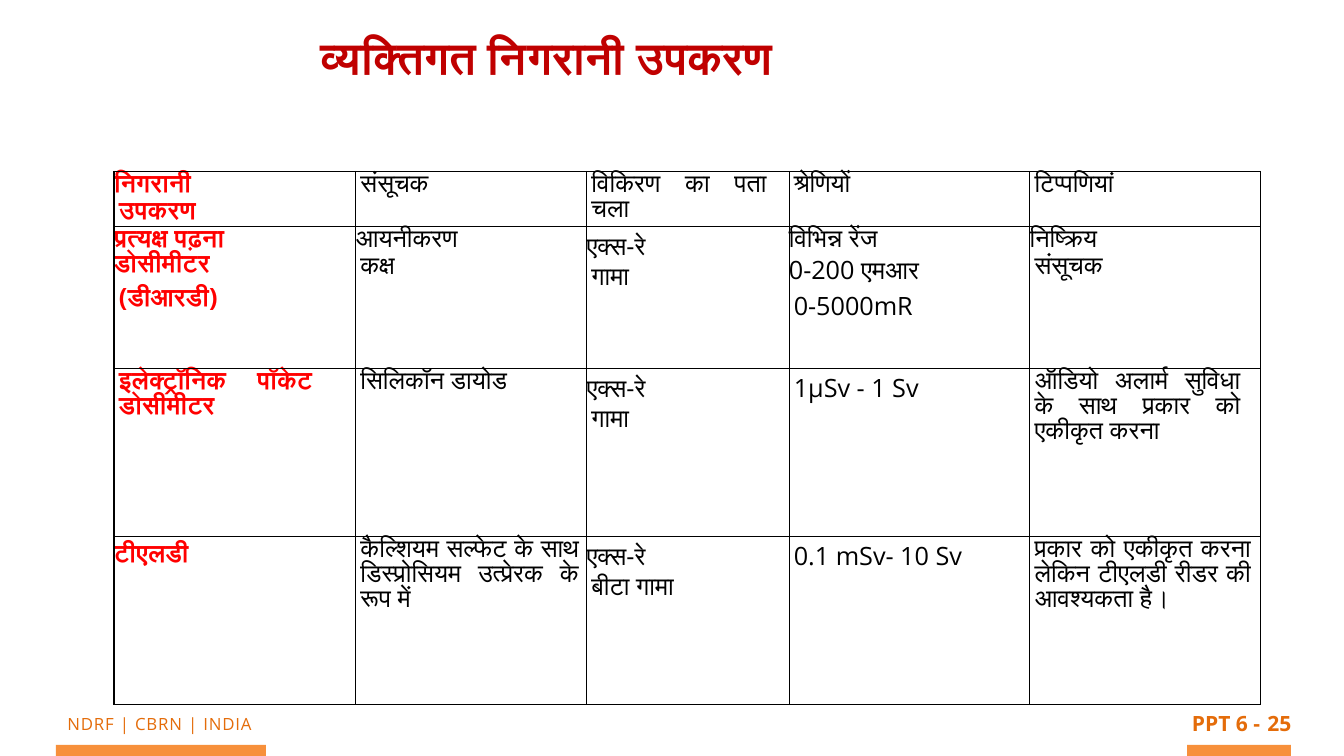
from dataclasses import dataclass

from lxml import etree
from pptx import Presentation
from pptx.dml.color import RGBColor
from pptx.enum import shapes, text
from pptx.oxml.ns import qn
from pptx.util import Emu, Pt

PX = 12700  # EMU per px on a 1920 x 1080 slide


@dataclass(frozen=True)
class Theme:
    font: str = "Open Sans"
    title: str = "C00000"
    label: str = "FF0000"
    body: str = "000000"
    footer: str = "E46C0A"
    bar: str = "F7903B"
    title_size: int = 64
    table_size: int = 36
    page_size: int = 30
    footer_size: int = 24
    compact_line: int = 36  # Devanagari only
    mixed_line: int = 46    # Latin signs below a compact line
    loose_line: int = 44
    outer_line: float = 2.25
    inner_line: float = 1


THEME = Theme()
INDENT = 7

COLUMN_WIDTHS = [345, 330, 289, 344, 330]
ROW_HEIGHTS = [78, 203, 240, 240]
# Each cell lists its paragraphs
ROWS = [
    [["निगरानी", "उपकरण"], ["संसूचक"], ["विकिरण का पता चला"], ["श्रेणियों"], ["टिप्पणियां"]],
    [["प्रत्यक्ष पढ़ना", "डोसीमीटर", "(डीआरडी)"], ["आयनीकरण", "कक्ष"], ["एक्स-रे", "गामा"],
     ["विभिन्न रेंज", "0-200 एमआर", "0-5000mR"], ["निष्क्रिय", "संसूचक"]],
    [["इलेक्ट्रॉनिक पॉकेट डोसीमीटर"], ["सिलिकॉन डायोड"], ["एक्स-रे", "गामा"],
     ["1μSv - 1 Sv"], ["ऑडियो अलार्म सुविधा के साथ प्रकार को एकीकृत करना"]],
    [["टीएलडी"], ["कैल्शियम सल्फेट के साथ डिस्प्रोसियम उत्प्रेरक के रूप में"],
     ["एक्स-रे", "बीटा गामा"], ["0.1 mSv- 10 Sv"],
     ["प्रकार को एकीकृत करना लेकिन टीएलडी रीडर की आवश्यकता है।"]],
]
# Right indents of the wrapped cells, by (row, column)
RIGHT_INDENTS = {(0, 2): 32, (2, 0): 62, (2, 4): 29, (3, 1): 11, (3, 4): 14}


def px(value):
    return Emu(value * PX)


def add_run(paragraph, words, size, color, bold=False, spacing=0):
    run = paragraph.add_run()
    run.text = words
    font = run.font
    font.size, font.bold, font.name = Pt(size), bold, THEME.font
    font.color.rgb = RGBColor.from_string(color)
    properties = run._r.get_or_add_rPr()
    etree.SubElement(properties, qn("a:cs"), typeface=THEME.font)
    if spacing:
        properties.set("spc", str(spacing))


def add_text(slide, box, words, size, color, bold=False, spacing=0, inset=(6, 6),
             align=text.PP_ALIGN.CENTER, wrap=True):
    frame = slide.shapes.add_textbox(*map(px, box)).text_frame
    frame.word_wrap = wrap
    frame.margin_left = frame.margin_right = px(inset[0])
    frame.margin_top = frame.margin_bottom = px(inset[1])
    paragraph = frame.paragraphs[0]
    paragraph.alignment = align
    add_run(paragraph, words, size, color, bold, spacing)


def add_bar(slide, box):
    shape = slide.shapes.add_shape(shapes.MSO_SHAPE.RECTANGLE, *map(px, box))
    shape.shadow.inherit = False
    shape.fill.solid()
    shape.fill.fore_color.rgb = RGBColor.from_string(THEME.bar)
    shape.line.fill.background()


def add_footer(slide, left, top):
    # Organisation on the left
    add_text(slide, (left, top + 5, 366, 42), "NDRF | CBRN | INDIA",
             THEME.footer_size, THEME.footer, spacing=120)
    add_bar(slide, (left + 35, top + 55, 300, 16))
    # Page number on the right
    page = left + 1651
    add_text(slide, (page, top, 111, 49), "PPT 6 -", THEME.page_size,
             THEME.footer, bold=True, wrap=False)
    add_text(slide, (page + 96, top, 71, 40), "25", THEME.page_size,
             THEME.footer, bold=True)
    add_bar(slide, (page, top + 55, 148, 16))


def add_title(slide, box):
    add_text(slide, box, "व्यक्तिगत निगरानी उपकरण", THEME.title_size, THEME.title,
             bold=True, inset=(7, 3), align=text.PP_ALIGN.LEFT)


def set_borders(cell, outer_sides):
    properties = cell._tc.get_or_add_tcPr()
    for index, side in enumerate("LRTB"):
        width = THEME.outer_line if side in outer_sides else THEME.inner_line
        line = etree.Element(qn(f"a:ln{side}"), w=str(Pt(width)))
        fill = etree.SubElement(line, qn("a:solidFill"))
        etree.SubElement(fill, qn("a:srgbClr"), val=THEME.body)
        properties.insert(index, line)


def has_latin(words):
    return any(sign in "-()" or sign.isascii() and sign.isalnum() for sign in words)


def fill_cell(cell, paragraphs, is_label, right_indent, loose):
    cell.margin_left = cell.margin_right = cell.margin_bottom = 0
    cell.margin_top = px(3 if loose or has_latin(paragraphs[0]) else 4)
    cell.fill.background()
    frame = cell.text_frame
    for index, words in enumerate(paragraphs):
        paragraph = frame.add_paragraph() if index else frame.paragraphs[0]
        paragraph.alignment = text.PP_ALIGN.JUSTIFY
        after_latin = index > 0 and has_latin(paragraphs[index - 1])
        # Line height follows the script of the paragraph
        if loose:
            paragraph.line_spacing = Pt(THEME.loose_line)
        elif not has_latin(words):
            paragraph.line_spacing = Pt(THEME.compact_line)
        elif index and not after_latin:
            paragraph.line_spacing = Pt(THEME.mixed_line)
        # Only the closing paragraph of a cell is indented
        if not loose and index == len(paragraphs) - 1:
            properties = paragraph._p.get_or_add_pPr()
            properties.set("marL", str(px(INDENT)))
            properties.set("marR", str(px(right_indent)))
            properties.set("indent", "0")
            if index:
                compact_after_latin = after_latin and not has_latin(words)
                paragraph.space_before = Pt(6 if compact_after_latin else 2.8)
        add_run(paragraph, words, THEME.table_size,
                THEME.label if is_label else THEME.body, bold=is_label)


def add_monitor_table(slide, left, top):
    box = (left, top, sum(COLUMN_WIDTHS), sum(ROW_HEIGHTS))
    table = slide.shapes.add_table(len(ROWS), len(COLUMN_WIDTHS), *map(px, box)).table
    table.first_row = table.horz_banding = False
    for column, width in zip(table.columns, COLUMN_WIDTHS):
        column.width = px(width)
    last_row, last_column = len(ROWS) - 1, len(COLUMN_WIDTHS) - 1
    for r, row in enumerate(ROWS):
        table.rows[r].height = px(ROW_HEIGHTS[r])
        for c, paragraphs in enumerate(row):
            cell = table.cell(r, c)
            fill_cell(cell, paragraphs, c == 0, RIGHT_INDENTS.get((r, c), 0),
                      loose=(r, c) == (last_row, 0))
            edges = {"L": c == 0, "R": c == last_column, "T": r == 0, "B": r == last_row}
            set_borders(cell, [side for side, outer in edges.items() if outer])


def main():
    presentation = Presentation()
    presentation.slide_width, presentation.slide_height = px(1920), px(1080)
    slide = presentation.slides.add_slide(presentation.slide_layouts[6])
    add_footer(slide, 45, 1009)
    add_title(slide, (451, 39, 1080, 188))
    add_monitor_table(slide, 163, 245)
    presentation.save("out.pptx")


if __name__ == "__main__":
    main()
